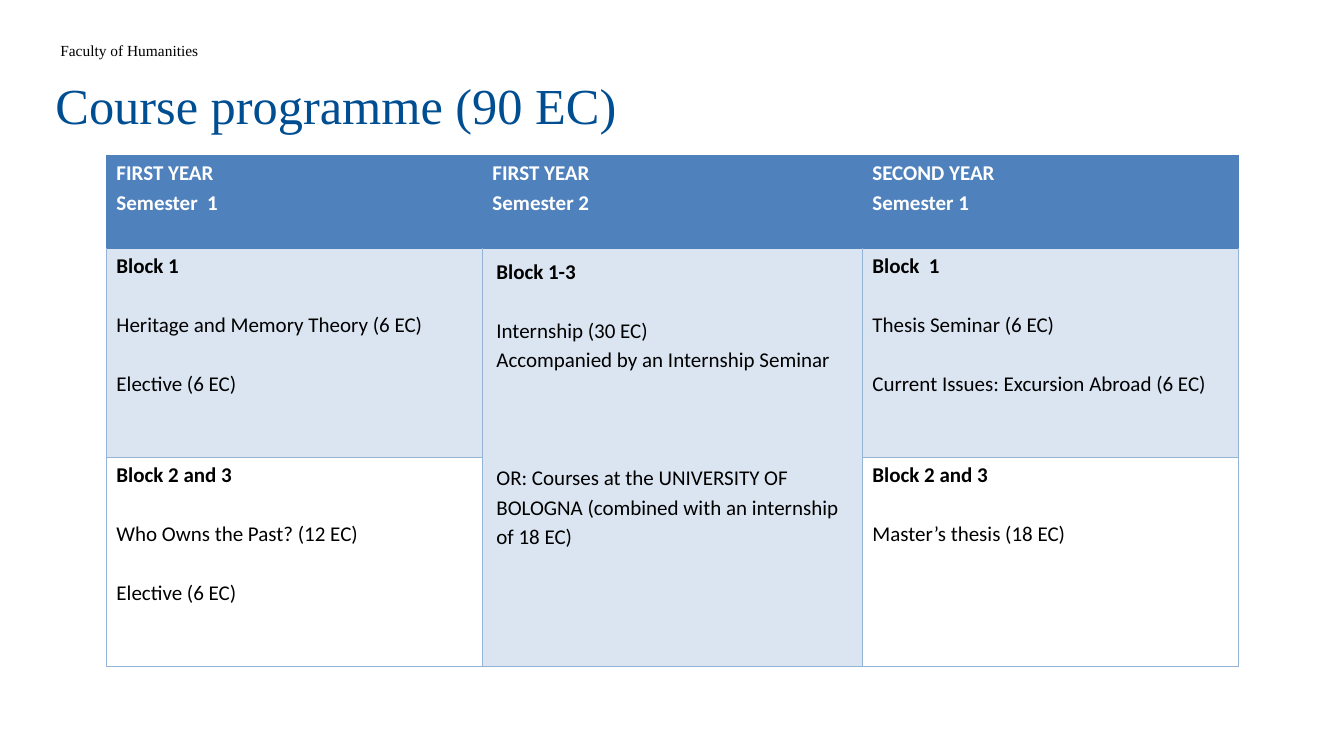
from dataclasses import dataclass

from lxml import etree
from pptx import Presentation
from pptx import util as u
from pptx.dml.color import RGBColor
from pptx.enum import text
from pptx.oxml import ns

Pt = u.Pt


@dataclass(frozen=True)
class Theme:
    serif: str = "Times New Roman"
    sans: str = "Calibri"
    black: str = "000000"
    white: str = "FFFFFF"
    navy: str = "004E92"
    head: str = "4F81BD"
    pale: str = "DBE5F1"
    rule: str = "95B3D7"
    small: float = 11
    body: float = 15
    big: float = 36
    line: float = 21  # one line of body text


THEME = Theme()
COLS = [268.6, 271.4, 268.6]
ROWS = [66.4, 149.2, 149.2]
SLIM = (7.2, 0.7, 7.2, 0)
WIDE = (10, 5, 10, 5)

# Each line: its text, then the number of empty lines above it.
HEADS = [
    [("FIRST YEAR", 0), ("Semester  1", 0)],
    [("FIRST YEAR", 0), ("Semester 2", 0)],
    [("SECOND YEAR", 0), ("Semester 1", 0)],
]
BLOCKS = {
    (1, 0): [("Block 1", 0), ("Heritage and Memory Theory (6 EC)", 1),
             ("Elective (6 EC)", 1)],
    (1, 1): [("Block 1-3", 0), ("Internship (30 EC)", 1),
             ("Accompanied by an Internship Seminar", 0),
             ("OR: Courses at the UNIVERSITY OF BOLOGNA "
              "(combined with an internship of 18 EC)", 3)],
    (1, 2): [("Block  1", 0), ("Thesis Seminar (6 EC)", 1),
             ("Current Issues: Excursion Abroad (6 EC)", 1)],
    (2, 0): [("Block 2 and 3", 0), ("Who Owns the Past? (12 EC)", 1),
             ("Elective (6 EC)", 1)],
    (2, 2): [("Block 2 and 3", 0), ("Master’s thesis (18 EC)", 1)],
}


def add_run(para, words, face, size, color, bold=False):
    run = para.add_run()
    run.text = words
    font = run.font
    font.name, font.size, font.bold = face, Pt(size), bold
    font.color.rgb = RGBColor.from_string(color)


def add_label(slide):
    box = slide.shapes.add_textbox(Pt(36), Pt(26), Pt(201.6), Pt(21))
    box.text_frame.word_wrap = True
    add_run(box.text_frame.paragraphs[0], "Faculty of Humanities",
            THEME.serif, THEME.small, THEME.black)


def set_title(slide):
    title = slide.shapes.title
    title.left, title.top = Pt(32.4), Pt(43.2)
    title.width, title.height = Pt(878.4), Pt(56.9)
    frame = title.text_frame
    frame.auto_size = text.MSO_AUTO_SIZE.NONE
    frame.vertical_anchor = text.MSO_ANCHOR.BOTTOM
    para = frame.paragraphs[0]
    para.alignment = text.PP_ALIGN.LEFT
    para.line_spacing = 0.9
    add_run(para, "Course programme (90 EC)",
            THEME.serif, THEME.big, THEME.navy)


def set_edges(cell, color, top):
    """Draw 1 pt borders; the top one may differ in colour."""
    props = cell._tc.get_or_add_tcPr()
    for side in "LRTB":
        edge = etree.SubElement(props, ns.qn(f"a:ln{side}"), w=str(Pt(1)))
        fill = etree.SubElement(edge, ns.qn("a:solidFill"))
        etree.SubElement(fill, ns.qn("a:srgbClr"),
                         val=top if side == "T" else color)


def set_fill(cell, color):
    if color:
        cell.fill.solid()
        cell.fill.fore_color.rgb = RGBColor.from_string(color)
    else:
        cell.fill.background()


def fill_text(cell, lines, color, strong, inset):
    """Write the lines; the first `strong` of them are bold."""
    (cell.margin_left, cell.margin_top,
     cell.margin_right, cell.margin_bottom) = map(Pt, inset)
    frame = cell.text_frame
    for num, (words, gap) in enumerate(lines):
        para = frame.add_paragraph() if num else frame.paragraphs[0]
        para.line_spacing = 1.15
        if gap:
            para.space_before = Pt(gap * THEME.line)
        add_run(para, words, THEME.sans, THEME.body, color, num < strong)


def add_plan(slide):
    table = slide.shapes.add_table(
        len(ROWS), len(COLS), Pt(76), Pt(111.2),
        Pt(sum(COLS)), Pt(sum(ROWS))).table
    table.first_row = table.horz_banding = False
    for col, width in zip(table.columns, COLS):
        col.width = Pt(width)
    for row, height in zip(table.rows, ROWS):
        row.height = Pt(height)
    table.cell(1, 1).merge(table.cell(2, 1))

    fills = [THEME.head, THEME.pale, None]
    for row, fill in enumerate(fills):
        for col in range(len(COLS)):
            cell = table.cell(row, col)
            set_edges(cell, THEME.rule if row else THEME.head,
                      THEME.rule if row == 2 else THEME.head)
            set_fill(cell, THEME.pale if cell.is_spanned else fill)
    for col, lines in enumerate(HEADS):
        fill_text(table.cell(0, col), lines, THEME.white, 2, SLIM)
    for spot, lines in BLOCKS.items():
        cell = table.cell(*spot)
        inset = WIDE if cell.is_merge_origin else SLIM
        fill_text(cell, lines, THEME.black, 1, inset)


def main():
    deck = Presentation()
    deck.slide_width, deck.slide_height = Pt(960), Pt(540)
    slide = deck.slides.add_slide(deck.slide_layouts[5])
    add_label(slide)
    set_title(slide)
    add_plan(slide)
    deck.save("out.pptx")


if __name__ == "__main__":
    main()
